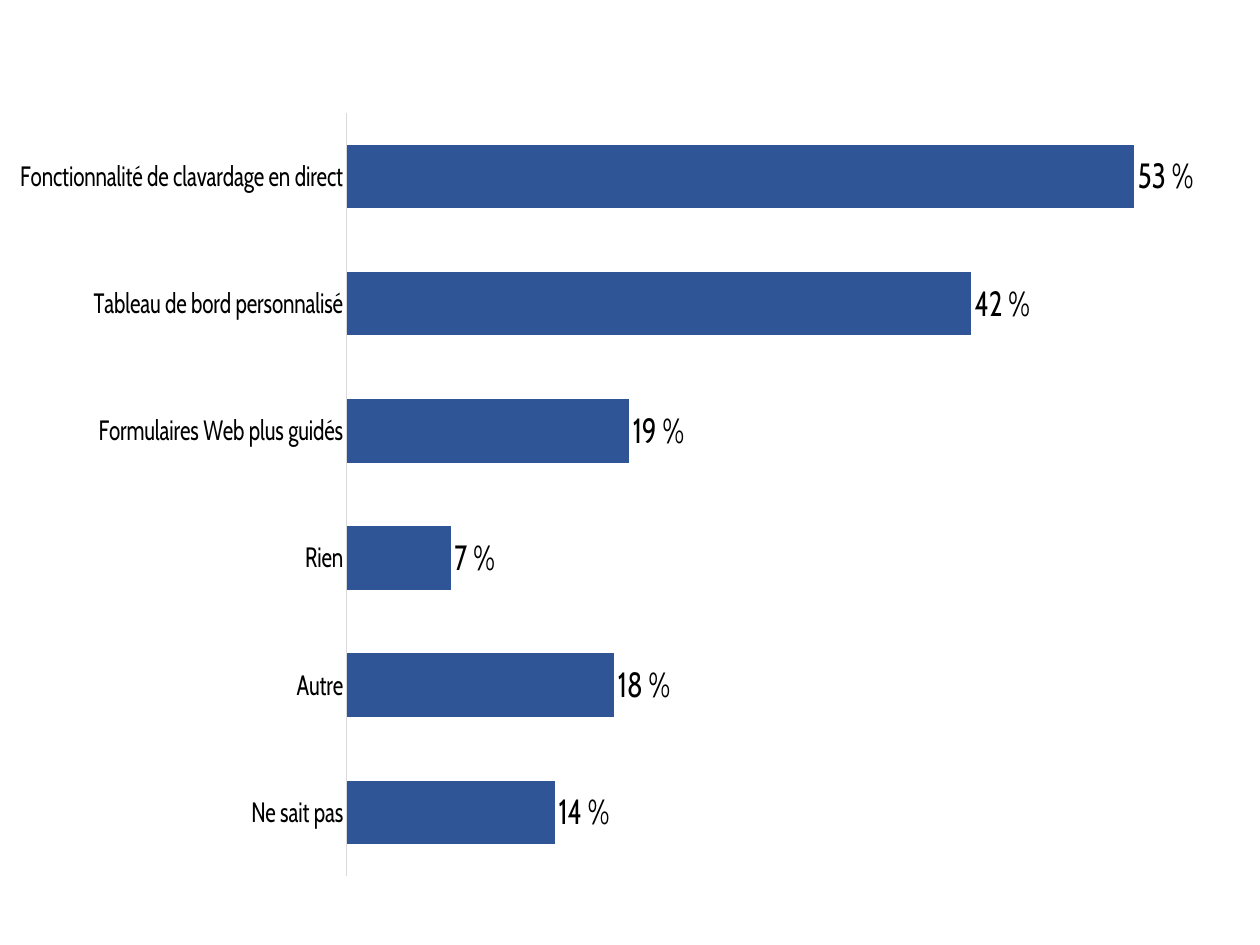
from lxml import etree
from pptx import Presentation
from pptx.chart.data import CategoryChartData
from pptx.dml.color import RGBColor
from pptx.enum.chart import XL_CHART_TYPE, XL_LABEL_POSITION, XL_TICK_LABEL_POSITION, XL_TICK_MARK
from pptx.oxml.ns import qn
from pptx.util import Pt

BAR_CLUSTERED = XL_CHART_TYPE.BAR_CLUSTERED
OUTSIDE_END = XL_LABEL_POSITION.OUTSIDE_END
NO_LABELS = XL_TICK_LABEL_POSITION.NONE
NO_TICKS = XL_TICK_MARK.NONE

BLUE = RGBColor(0x2F, 0x55, 0x97)
GREY = RGBColor(0xD9, 0xD9, 0xD9)
BLACK = RGBColor(0, 0, 0)
FONT = "Cabin"

ANSWERS = {
    "Fonctionnalité de clavardage en direct": 0.53,
    "Tableau de bord personnalisé": 0.42,
    "Formulaires Web plus guidés": 0.19,
    "Rien": 0.07,
    "Autre": 0.18,
    "Ne sait pas": 0.14,
}


def set_font(font, size):
    font.name = FONT
    font.size = Pt(size)
    font.bold = False
    font.color.rgb = BLACK


def set_plot_layout(chart, **fractions):
    """Fix the inner plot area as fractions of the chart."""
    plot_area = chart.plots[0]._element.getparent()
    layout = plot_area.find(qn("c:layout"))
    if layout is None:
        layout = etree.Element(qn("c:layout"))
        plot_area.insert(0, layout)
    manual = etree.SubElement(layout, qn("c:manualLayout"))
    settings = {"layoutTarget": "inner", "xMode": "edge", "yMode": "edge", **fractions}
    for name, value in settings.items():
        etree.SubElement(manual, qn(f"c:{name}")).set("val", str(value))


def add_answer_chart(slide, left, top, width, height):
    chart_data = CategoryChartData(number_format="0%")
    chart_data.categories = list(ANSWERS)
    chart_data.add_series("Series 1", list(ANSWERS.values()))
    chart = slide.shapes.add_chart(
        BAR_CLUSTERED, Pt(left), Pt(top), Pt(width), Pt(height), chart_data
    ).chart
    chart.has_title = False
    chart.has_legend = False
    set_font(chart.font, 10)
    # The bars take the full width, so the answers stand left of the plot area
    set_plot_layout(chart, x=0, y=0.022, w=1, h=0.977)

    # Answers, first one on top
    category_axis = chart.category_axis
    category_axis.reverse_order = True
    category_axis.major_tick_mark = NO_TICKS
    category_axis.format.line.color.rgb = GREY
    category_axis.format.line.width = Pt(0.75)
    set_font(category_axis.tick_labels.font, 16)

    # Hidden percentage scale
    value_axis = chart.value_axis
    value_axis.minimum_scale = 0
    value_axis.maximum_scale = 0.6
    value_axis.has_major_gridlines = False
    value_axis.tick_label_position = NO_LABELS
    value_axis.format.line.fill.background()
    set_font(value_axis.tick_labels.font, 12)

    # Bars and their values
    plot = chart.plots[0]
    plot.gap_width = 100
    plot.vary_by_categories = False
    series = plot.series[0]
    series.format.fill.solid()
    series.format.fill.fore_color.rgb = BLUE
    labels = series.data_labels
    labels.show_value = True
    labels.position = OUTSIDE_END
    labels.number_format = "0 %"
    labels.number_format_is_linked = False
    set_font(labels.font, 20)


def main():
    presentation = Presentation()
    presentation.slide_width = Pt(720)
    presentation.slide_height = Pt(540)
    slide = presentation.slides.add_slide(presentation.slide_layouts[6])
    add_answer_chart(slide, 11.5, 54.7, 696.2, 446.4)
    presentation.save("out.pptx")


if __name__ == "__main__":
    main()
